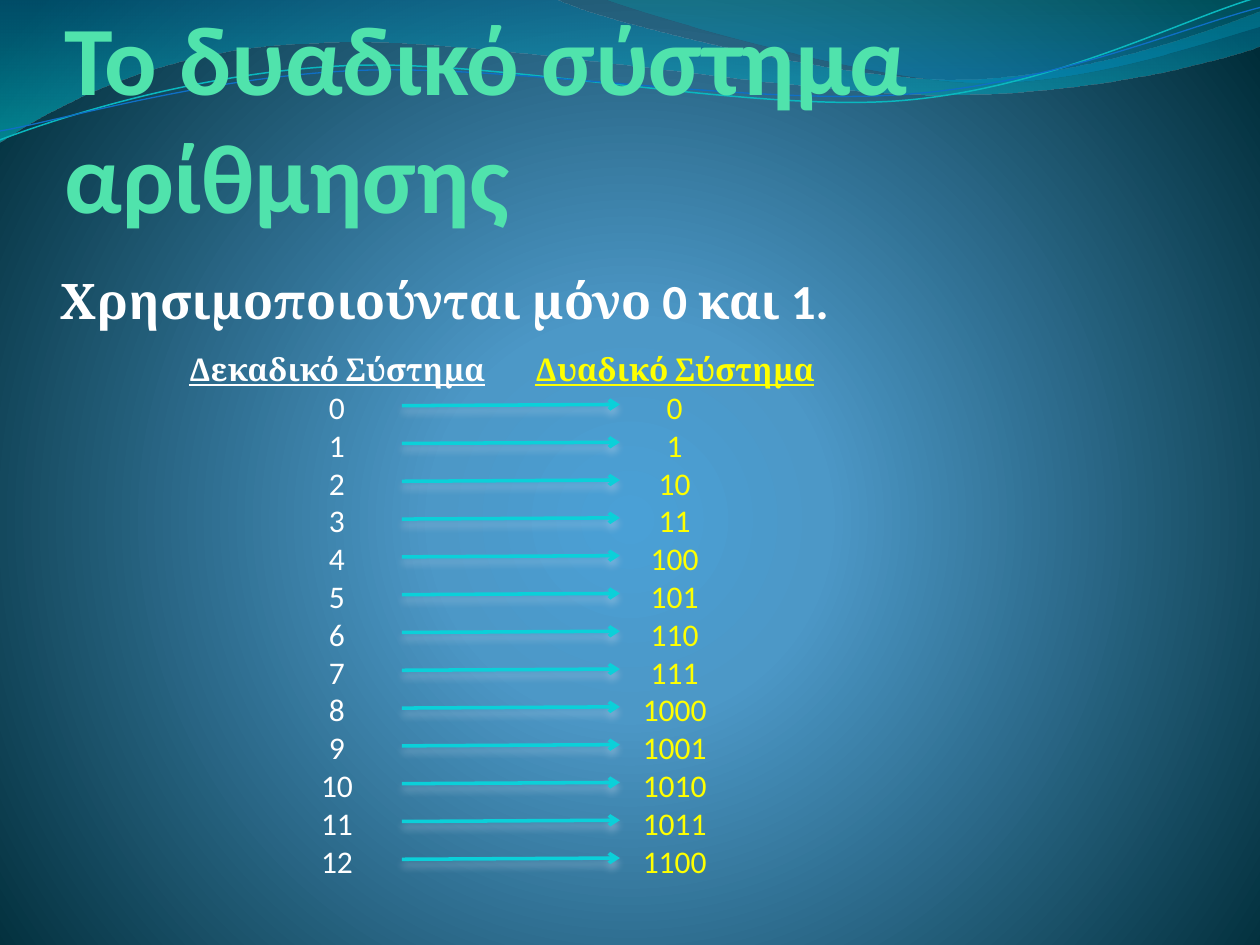
from math import cos, radians, sin
from lxml import etree
from pptx import Presentation
from pptx.dml.color import RGBColor
from pptx.enum.shapes import MSO_CONNECTOR
from pptx.enum.text import MSO_ANCHOR, MSO_AUTO_SIZE, PP_ALIGN
from pptx.oxml.ns import qn
from pptx.util import Inches, Pt

STRAIGHT = MSO_CONNECTOR.STRAIGHT
BOTTOM, TOP = MSO_ANCHOR.BOTTOM, MSO_ANCHOR.TOP
LEFT, CENTER = PP_ALIGN.LEFT, PP_ALIGN.CENTER
GROW = MSO_AUTO_SIZE.SHAPE_TO_FIT_TEXT
BLANK = 6
COUNT = 13
ROW = 0.3
TILT = 2.7

BAND = [(0, 0), (4.4, -0.01), (4.76, 0.17, 6.64, 0.63, 7.58, 0.63),
        (8.53, 0.63, 9.58, 0.26, 10, 0.09), (10.01, 0.36),
        (9.83, 0.44, 8.7, 0.76, 7.46, 0.75), (6.22, 0.75, 3.82, 0.28, 2.57, 0.34),
        (1.29, 0.36, 0.46, 0.83, -0.01, 1.13), (0, 0)]
CREST = [(4.79, -0.01), (5.09, 0.11, 6.82, 0.62, 7.69, 0.65),
         (8.56, 0.69, 9.61, 0.32, 10, 0.21), (10, 0), (4.79, -0.01)]
TEAL = [(0, 1.11), (0.48, 0.93, 1.58, 0.57, 2.77, 0.52),
        (3.95, 0.47, 5.93, 0.89, 7.13, 0.8), (8.33, 0.71, 9.38, 0.15, 9.98, -0.02)]
BLUE = [(0, 1.04), (0.47, 0.96, 1.64, 0.61, 2.83, 0.56),
        (4.03, 0.51, 5.97, 0.84, 7.17, 0.75), (8.36, 0.67, 9.41, 0.21, 10, 0.06)]


def rgb(code):
    """Turn a hex string into a colour."""
    return RGBColor.from_string(code)


def add(parent, tag, **attrs):
    """Append a DrawingML child with the given attributes."""
    return etree.SubElement(parent, qn(tag), {k: str(v) for k, v in attrs.items()})


def tint(parent, code, alpha):
    """Append a colour with an opacity in percent."""
    add(add(parent, "a:srgbClr", val=code), "a:alpha", val=alpha * 1000)


def blend(fill, root, stops):
    """Set a gradient with the given stops and return its element."""
    fill.gradient()
    grad = next(root.iter(qn("a:gradFill")))
    grad.clear()
    rows = add(grad, "a:gsLst")
    for pos, code, alpha in stops:
        tint(add(rows, "a:gs", pos=pos * 1000), code, alpha)
    return grad


def paint(slide):
    """Paint the radial background."""
    stops = [(0, "4AA0D6", 100), (25, "4C98C7", 100), (100, "002C38", 100)]
    grad = blend(slide.background.fill, slide.element, stops)
    ring = add(grad, "a:path", path="circle")
    add(ring, "a:fillToRect", l=10000, t=110000, r=10000, b=100000)


def pairs(leg):
    """Split flat coordinates into points."""
    return list(zip(leg[::2], leg[1::2]))


def turn(route, pivot, angle):
    """Rotate a route clockwise about a pivot."""
    c, s = cos(radians(angle)), sin(radians(angle))
    px, py = pivot
    return [tuple(v for x, y in pairs(leg)
                  for v in (px + (x - px) * c - (y - py) * s,
                            py + (x - px) * s + (y - py) * c))
            for leg in route]


def outline(slide, route, close):
    """Build a freeform along lines and cubic curves."""
    spots = [(Inches(x), Inches(y)) for leg in route for x, y in pairs(leg)]
    pen = slide.shapes.build_freeform(*spots[0])
    pen.add_line_segments(spots[1:], close=close)
    shape = pen.convert_to_shape()
    shape.shadow.inherit = False
    lines = iter(list(shape.element.iter(qn("a:lnTo"))))
    for leg in route[1:]:
        first = next(lines)
        if len(leg) == 6:
            curve = etree.Element(qn("a:cubicBezTo"))
            first.addprevious(curve)
            for line in (first, next(lines), next(lines)):
                curve.append(line[0])
                line.getparent().remove(line)
    return shape


def wave(slide, route, stops):
    """Add a filled wave with a vertical gradient."""
    shape = outline(slide, route, True)
    shape.line.fill.background()
    add(blend(shape.fill, shape.element, stops), "a:lin", ang=5400000, scaled=0)


def strand(slide, route, pivot, code, width):
    """Add a thin tilted curve."""
    shape = outline(slide, turn(route, pivot, TILT), False)
    shape.rotation = 360 - TILT
    shape.fill.background()
    shape.line.color.rgb = rgb(code)
    shape.line.width = Pt(width)


def style(run, font, size, code, bold=True, under=False):
    """Format a run."""
    run.font.name = font
    run.font.size = Pt(size)
    run.font.color.rgb = rgb(code)
    run.font.bold = bold
    run.font.underline = under


def textbox(slide, box, pad, anchor=TOP):
    """Add a wrapping text frame with (side, top) insets."""
    frame = slide.shapes.add_textbox(*map(Inches, box)).text_frame
    frame.word_wrap = True
    frame.vertical_anchor = anchor
    frame.margin_left = frame.margin_right = Inches(pad[0])
    frame.margin_top = frame.margin_bottom = Inches(pad[1])
    return frame


def phrase(frame, parts, size, code):
    """Fill the first paragraph with (text, font) parts."""
    para = frame.paragraphs[0]
    para.alignment = LEFT
    for text, font in parts:
        run = para.add_run()
        run.text = text
        style(run, font, size, code)


def column(slide, left, head, items, code):
    """Add a centred list under an underlined heading."""
    frame = textbox(slide, (left, 2.73, 3.23, 4.34), (0.1, 0.05))
    frame.auto_size = GROW
    frame.text = "\n".join([head, *items])
    for row, para in enumerate(frame.paragraphs):
        para.alignment = CENTER
        top = row == 0
        style(para.runs[0], "Cambria" if top else "Calibri", 18, code, top, top)


def arrow(slide, y):
    """Add a shadowed arrow from decimal to binary."""
    ends = map(Inches, (3.19, y, 4.92, y - 0.01))
    link = slide.shapes.add_connector(STRAIGHT, *ends)
    link.line.color.rgb = rgb("0BD0D9")
    link.line.width = Pt(2)
    add(next(link.element.iter(qn("a:ln"))), "a:tailEnd", type="arrow")
    glow = add(add(link.element.spPr, "a:effectLst"), "a:outerShdw", blurRad=Pt(4.5),
               dist=Pt(3), dir=5400000, rotWithShape=0)
    tint(glow, "C0D4E8", 48)


def main():
    """Build and save the slide."""
    deck = Presentation()
    deck.slide_width, deck.slide_height = Inches(10), Inches(7.5)
    slide = deck.slides.add_slide(deck.slide_layouts[BLANK])
    paint(slide)
    wave(slide, BAND, [(0, "0074A1", 45), (100, "00C6CF", 55)])
    wave(slide, CREST, [(0, "00A1A9", 30), (80, "008BBF", 45)])
    strand(slide, TEAL, (4.99, 0.58), "0AB8BF", 0.85)
    strand(slide, BLUE, (5, 0.59), "0F6FC6", 0.75)
    title = textbox(slide, (0.51, 0.36, 8.5, 1.49), (0, 0), BOTTOM)
    phrase(title, [("Το δυαδικό σύστημα αρίθμησης", "Calibri")], 56, "50E3AC")
    lead = textbox(slide, (0.43, 2.1, 8.5, 0.63), (0.05, 0.05))
    phrase(lead, [("Χρησιμοποιούνται μόνο ", "Cambria"), ("0 ", "Calibri"),
                  ("και ", "Cambria"), ("1.", "Calibri")], 28, "FFFFFF")
    nums = range(COUNT)
    column(slide, 1.06, "Δεκαδικό Σύστημα", [str(n) for n in nums], "FFFFFF")
    column(slide, 3.74, "Δυαδικό Σύστημα", [f"{n:b}" for n in nums], "FFFF00")
    for n in nums:
        arrow(slide, 3.22 + n * ROW)
    deck.save("out.pptx")


if __name__ == "__main__":
    main()
